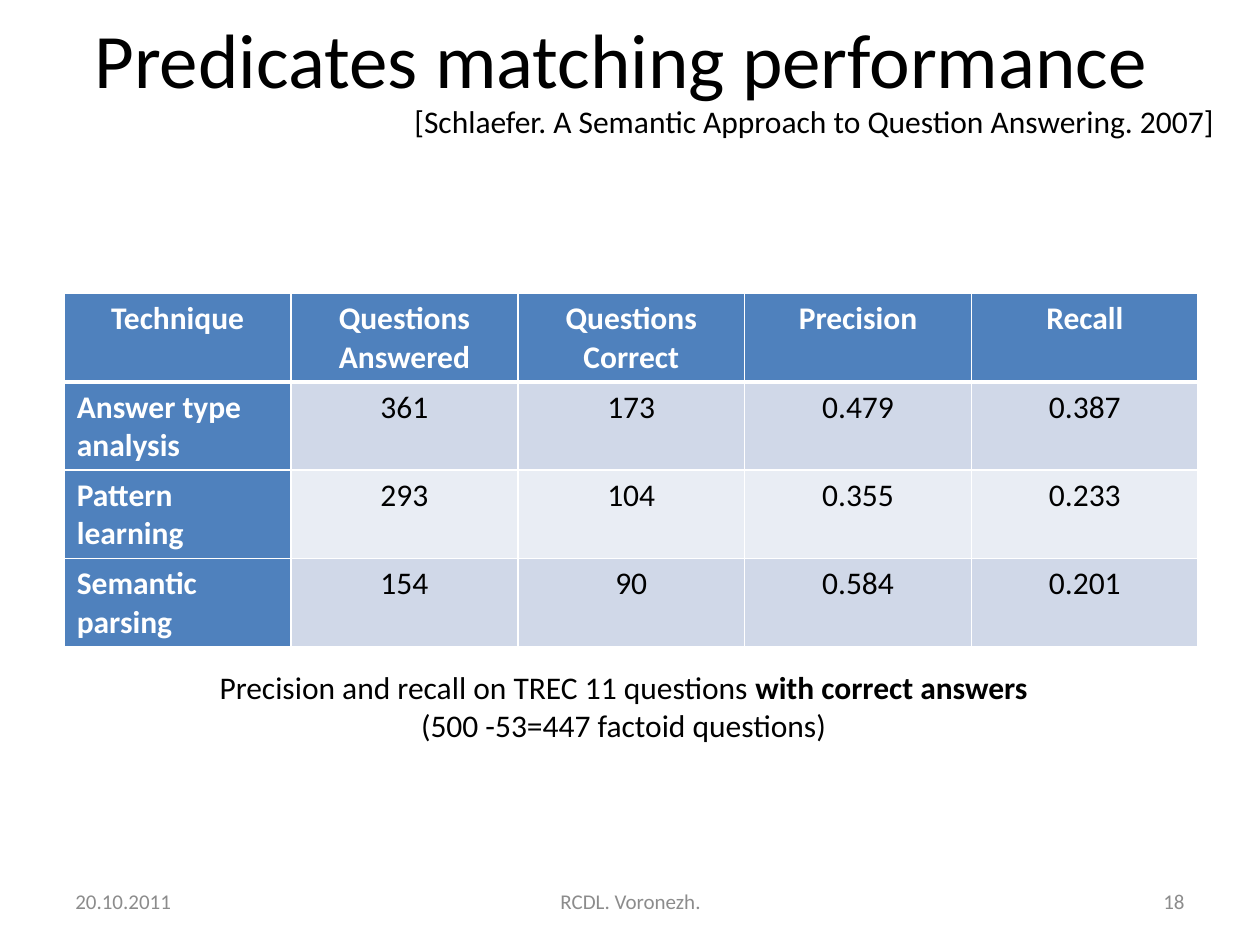
from lxml.etree import SubElement
from pptx import Presentation
from pptx.dml.color import RGBColor
from pptx.enum.text import MSO_ANCHOR, PP_ALIGN
from pptx.oxml.ns import qn
from pptx.util import Inches, Pt

WIDTH, HEIGHT, MARGIN = 10, 7.5, 0.5
BLACK, WHITE, GRAY, BLUE = "000000", "FFFFFF", "8C8C8C", "4F81BD"
BANDS = ["D0D8E8", "E9EDF4"]
LEFT, CENTER, RIGHT = PP_ALIGN.LEFT, PP_ALIGN.CENTER, PP_ALIGN.RIGHT

TITLE = "Predicates matching performance "
CITATION = "[Schlaefer. A Semantic Approach to Question Answering. 2007]"
RESULTS = [
    ["Technique", "Questions Answered", "Questions Correct", "Precision", "Recall"],
    ["Answer type analysis", "361", "173", "0.479", "0.387"],
    ["Pattern learning", "293", "104", "0.355", "0.233"],
    ["Semantic parsing", "154", "90", "0.584", "0.201"],
]
CAPTION = [  # text, bold
    ("Precision and recall on TREC 11 questions ", False),
    ("with correct answers", True),
    ("\n", False),
    ("(500 -53=447 factoid questions)", False),
]
FOOTERS = [  # text, left, width, alignment
    ("20.10.2011", MARGIN, 2.33, LEFT),
    ("RCDL. Voronezh.", 3.42, 3.17, CENTER),
    ("18", WIDTH - MARGIN - 2.33, 2.33, RIGHT),
]


def color(value):
    return RGBColor.from_string(value)


def write(frame, spans, size=18, fill=BLACK, align=LEFT):
    """Fill the first paragraph with (text, bold) spans; a newline is a line break."""
    para = frame.paragraphs[0]
    para.alignment = align
    for text, bold in spans:
        if text == "\n":
            para.add_line_break()
            continue
        span = para.add_run()
        span.text = text
        span.font.name = "Calibri"
        span.font.size = Pt(size)
        span.font.bold = bold
        span.font.color.rgb = color(fill)


def add_text(page, spans, left, top, width, height, wrap=True,
             anchor=MSO_ANCHOR.TOP, **text_format):
    box = page.shapes.add_textbox(*map(Inches, (left, top, width, height)))
    box.text_frame.word_wrap = wrap
    box.text_frame.vertical_anchor = anchor
    write(box.text_frame, spans, **text_format)


def add_borders(cell, **widths):
    """Draw white cell borders, with widths in points keyed by side."""
    properties = cell._tc.get_or_add_tcPr()
    for position, (side, width) in enumerate(widths.items()):
        line = properties.makeelement(qn(f"a:ln{side}"), {"w": str(Pt(width))})
        properties.insert(position, line)
        solid = SubElement(line, qn("a:solidFill"))
        SubElement(solid, qn("a:srgbClr"), val=WHITE)


def add_results(page, left, top, width, height):
    rows, columns = len(RESULTS), len(RESULTS[0])
    table = page.shapes.add_table(
        rows, columns, *map(Inches, (left, top, width, height))).table
    table.first_col = True
    for row, values in enumerate(RESULTS):
        for column, value in enumerate(values):
            cell = table.cell(row, column)
            heading = row == 0 or column == 0
            cell.fill.solid()
            cell.fill.fore_color.rgb = color(BLUE if heading else BANDS[(row - 1) % 2])
            write(cell.text_frame, [(value, heading)],
                  fill=WHITE if heading else BLACK,
                  align=LEFT if column == 0 and row else CENTER)
            add_borders(cell, L=1, R=1, T=3 if row == 1 else 1, B=1 if row else 3)


def main():
    deck = Presentation()
    deck.slide_width, deck.slide_height = Inches(WIDTH), Inches(HEIGHT)
    page = deck.slides.add_slide(deck.slide_layouts[6])
    content_width = WIDTH - 2 * MARGIN

    add_text(page, [(TITLE, False)], MARGIN, 0, content_width, 0.92,
             anchor=MSO_ANCHOR.MIDDLE, size=44, align=CENTER)
    add_text(page, [(CITATION, False)], 3.19, 0.76, 6.81, 0.4, wrap=False)
    add_results(page, 0.51, 2.33, content_width, 2.8)
    add_text(page, CAPTION, 1.61, 5.25, 6.68, 0.71, wrap=False, align=CENTER)
    for text, left, width, align in FOOTERS:
        add_text(page, [(text, False)], left, 6.95, width, 0.4,
                 anchor=MSO_ANCHOR.MIDDLE, size=12, fill=GRAY, align=align)
    deck.save("out.pptx")


if __name__ == "__main__":
    main()
